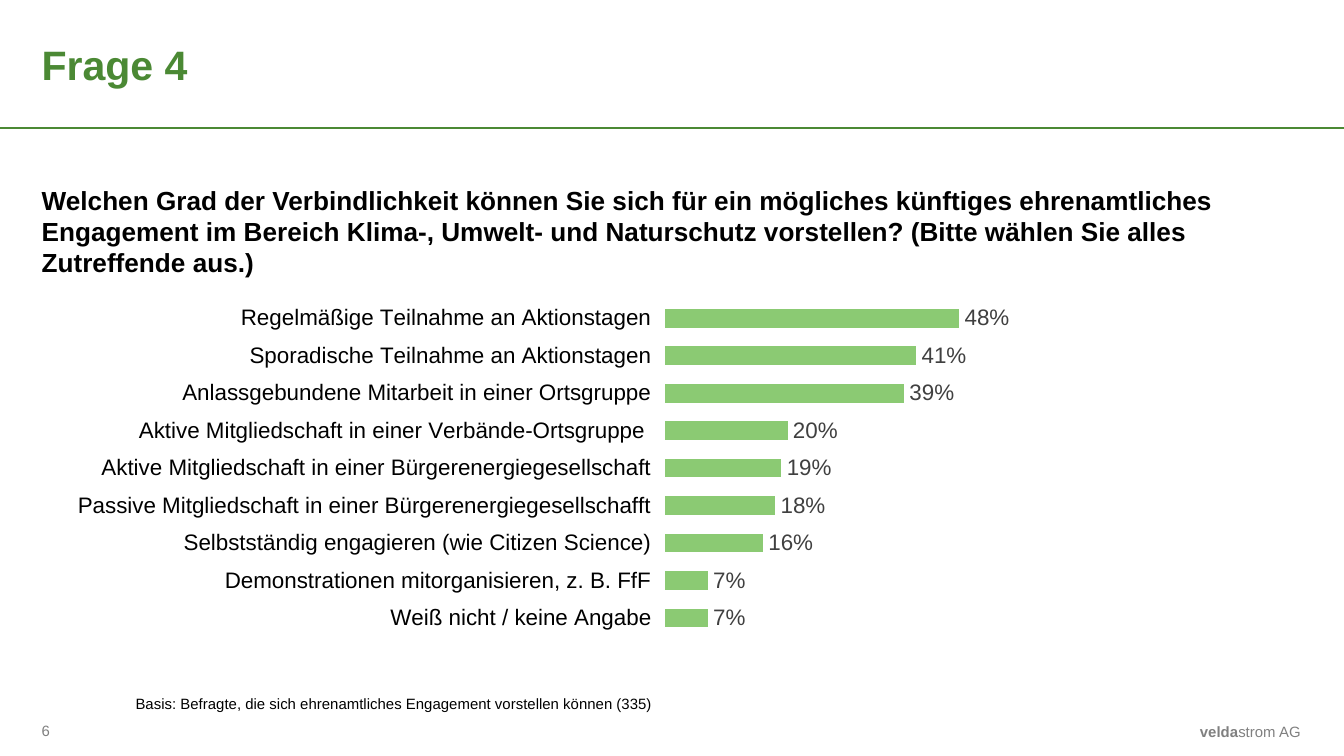
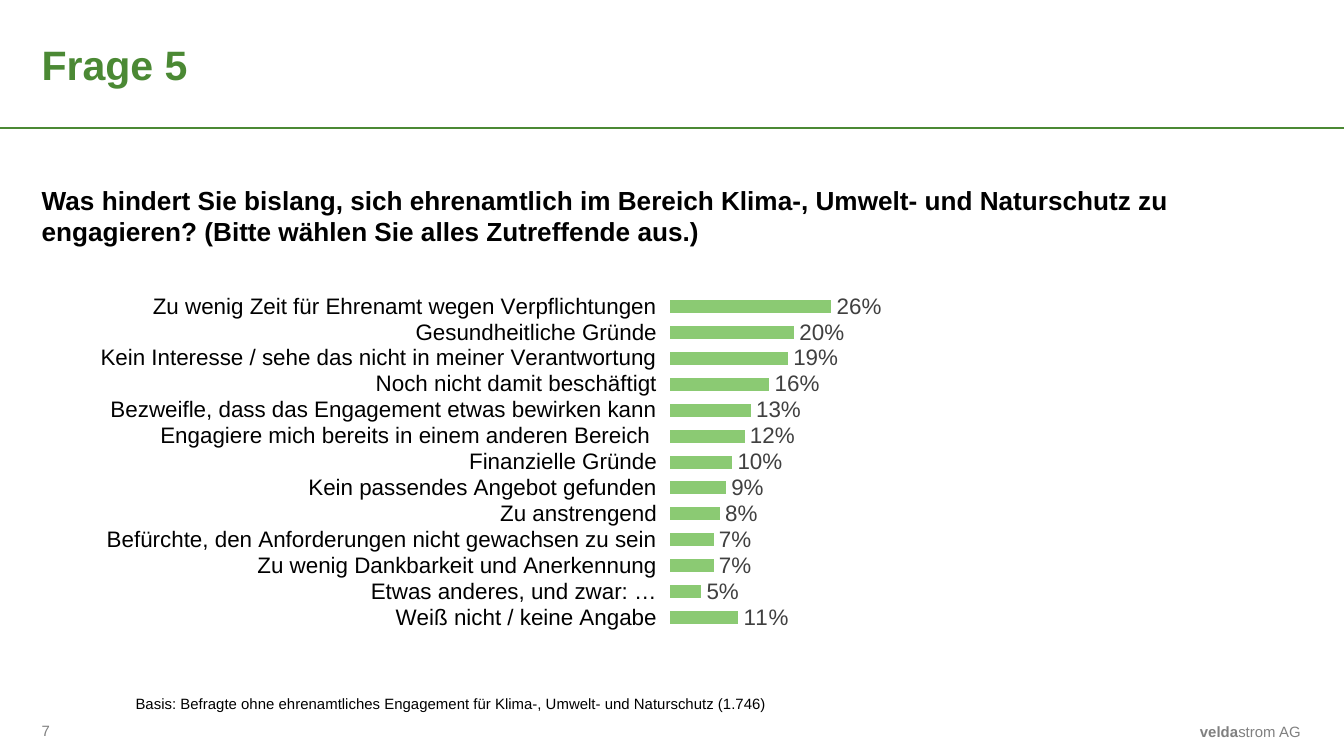
import lxml.etree
import pptx
import pptx.chart.data
import pptx.dml.color
import pptx.enum.chart
import pptx.enum.shapes
import pptx.enum.text
import pptx.oxml
import pptx.oxml.ns
import pptx.util

Inches = pptx.util.Inches
Pt = pptx.util.Pt
qn = pptx.oxml.ns.qn

FONT = "Arial"
GREEN = "4B8934"
BAR_GREEN = "8BCA73"
GREY = "808080"
LABEL_GREY = "404040"
BLACK = "000000"
LEFT = 0.31
CONTENT_WIDTH = 9.37

COMMITMENT = [
    ("Regelmäßige Teilnahme an Aktionstagen", 0.48),
    ("Sporadische Teilnahme an Aktionstagen", 0.41),
    ("Anlassgebundene Mitarbeit in einer Ortsgruppe", 0.39),
    ("Aktive Mitgliedschaft in einer Verbände-Ortsgruppe ", 0.20),
    ("Aktive Mitgliedschaft in einer Bürgerenergiegesellschaft", 0.19),
    ("Passive Mitgliedschaft in einer Bürgerenergiegesellschafft", 0.18),
    ("Selbstständig engagieren (wie Citizen Science)", 0.16),
    ("Demonstrationen mitorganisieren, z. B. FfF", 0.07),
    ("Weiß nicht / keine Angabe", 0.07),
]
OBSTACLES = [
    ("Zu wenig Zeit für Ehrenamt wegen Verpflichtungen", 0.26),
    ("Gesundheitliche Gründe", 0.20),
    ("Kein Interesse / sehe das nicht in meiner Verantwortung", 0.19),
    ("Noch nicht damit beschäftigt", 0.16),
    ("Bezweifle, dass das Engagement etwas bewirken kann", 0.13),
    ("Engagiere mich bereits in einem anderen Bereich ", 0.12),
    ("Finanzielle Gründe", 0.10),
    ("Kein passendes Angebot gefunden", 0.09),
    ("Zu anstrengend", 0.08),
    ("Befürchte, den Anforderungen nicht gewachsen zu sein", 0.07),
    ("Zu wenig Dankbarkeit und Anerkennung", 0.07),
    ("Etwas anderes, und zwar: …", 0.05),
    ("Weiß nicht / keine Angabe", 0.11),
]


def color(hex_string):
    """Return the colour for a hex string."""
    return pptx.dml.color.RGBColor.from_string(hex_string)


def style_font(font, size, hex_string, bold=False):
    """Set typeface, size, colour and weight of a font."""
    font.name = FONT
    font.size = Pt(size)
    font.bold = bold
    font.color.rgb = color(hex_string)


def place(shape, left, top, width, height):
    """Move a shape to a box given in inches."""
    shape.left, shape.top = Inches(left), Inches(top)
    shape.width, shape.height = Inches(width), Inches(height)


def style_frame(shape, insets=(0, 0, 0, 0), middle=True, wrap=True):
    """Set insets, anchor and wrapping of a shape's text and return its frame."""
    frame = shape.text_frame
    frame.margin_left, frame.margin_top, frame.margin_right, frame.margin_bottom = map(Inches, insets)
    anchors = pptx.enum.text.MSO_ANCHOR
    frame.vertical_anchor = anchors.MIDDLE if middle else anchors.TOP
    frame.auto_size = pptx.enum.text.MSO_AUTO_SIZE.NONE
    frame.word_wrap = wrap
    return frame


def write_line(frame, text, size, hex_string, bold=False):
    """Write one left-aligned paragraph and return it."""
    frame.text = text
    paragraph = frame.paragraphs[0]
    paragraph.alignment = pptx.enum.text.PP_ALIGN.LEFT
    style_font(paragraph.runs[0].font, size, hex_string, bold)
    return paragraph


def add_label(slide, box, text, size, hex_string, **frame_options):
    """Add a text box with one line of text and return its paragraph."""
    shape = slide.shapes.add_textbox(*map(Inches, box))
    return write_line(style_frame(shape, **frame_options), text, size, hex_string)


def add_header(slide, title):
    """Fill the title and draw the rule below it."""
    rule = slide.shapes.add_connector(
        pptx.enum.shapes.MSO_CONNECTOR.STRAIGHT, 0, Inches(0.95), Inches(10), Inches(0.95))
    rule.line.color.rgb = color(GREEN)
    rule.line.width = Pt(1)
    lxml.etree.SubElement(rule.element.spPr, qn("a:effectLst"))
    place(slide.shapes.title, LEFT, 0.3, CONTENT_WIDTH, 0.35)
    write_line(style_frame(slide.shapes.title), title, 22, GREEN, True)


def add_footer(slide, number):
    """Add the page number and the company name."""
    add_label(slide, (LEFT, 5.35, 0.28, 0.17), str(number), 8, GREY)
    company = add_label(slide, (8.83, 5.32, 0.86, 0.24), "velda", 8, GREY,
                        insets=(0.1, 0.05, 0, 0.05), wrap=False)
    company.runs[0].font.bold = True
    legal_form = company.add_run()
    legal_form.text = "strom AG"
    style_font(legal_form.font, 8, GREY)


def add_question(slide, question, height):
    """Fill the body placeholder with the survey question."""
    body = slide.placeholders[1]
    place(body, LEFT, 1.26, CONTENT_WIDTH, height)
    frame = style_frame(body, insets=(0, 0.11, 0, 0), middle=False)
    paragraph = write_line(frame, question, 14, BLACK, True)
    paragraph.space_before = Pt(0)
    paragraph.space_after = Pt(6)
    properties = paragraph._p.get_or_add_pPr()
    properties.set("marL", "0")
    properties.set("indent", "0")
    lxml.etree.SubElement(properties, qn("a:buNone"))


def set_plot_area(chart, area):
    """Fix the inner plot area as fractions of the chart."""
    plot_area = chart._chartSpace.find(".//" + qn("c:plotArea"))
    for layout in plot_area.findall(qn("c:layout")):
        plot_area.remove(layout)
    layout = lxml.etree.Element(qn("c:layout"))
    manual = lxml.etree.SubElement(layout, qn("c:manualLayout"))
    settings = [("layoutTarget", "inner"), ("xMode", "edge"), ("yMode", "edge")]
    settings += zip("xywh", area)
    for name, value in settings:
        lxml.etree.SubElement(manual, qn("c:" + name)).set("val", str(value))
    plot_area.insert(0, layout)


def add_answers(slide, answers, box, area):
    """Add the bar chart of answer shares."""
    data = pptx.chart.data.CategoryChartData(number_format="0%")
    data.categories = [answer for answer, share in answers]
    data.add_series("Series 1", [share for answer, share in answers])
    chart = slide.shapes.add_chart(
        pptx.enum.chart.XL_CHART_TYPE.BAR_CLUSTERED, *map(Inches, box), data).chart
    chart.has_title = False
    chart.has_legend = False
    style_font(chart.font, 12, BLACK)
    set_plot_area(chart, area)

    answer_axis = chart.category_axis
    answer_axis.reverse_order = True
    answer_axis.has_major_gridlines = False
    answer_axis.major_tick_mark = pptx.enum.chart.XL_TICK_MARK.NONE
    answer_axis.tick_label_position = pptx.enum.chart.XL_TICK_LABEL_POSITION.LOW
    answer_axis.format.line.fill.background()
    style_font(answer_axis.tick_labels.font, 12, BLACK)

    share_axis = chart.value_axis
    share_axis.minimum_scale, share_axis.maximum_scale = 0, 1
    share_axis.major_unit = 0.1
    share_axis.has_major_gridlines = False
    share_axis.visible = False

    plot = chart.plots[0]
    plot.gap_width = 100
    plot.overlap = -10
    plot.vary_by_categories = False
    fill = plot.series[0].format.fill
    fill.solid()
    fill.fore_color.rgb = color(BAR_GREEN)
    labels = plot.series[0].data_labels
    labels.show_value = True
    labels.number_format = "0%"
    labels.number_format_is_linked = False
    labels.position = pptx.enum.chart.XL_LABEL_POSITION.OUTSIDE_END
    style_font(labels.font, 12, LABEL_GREY)


def add_survey_slide(presentation, number, title, question, question_height, basis, answers, box, area):
    """Add one slide with a question, its answers and their basis."""
    slide = presentation.slides.add_slide(presentation.slide_layouts[1])
    add_header(slide, title)
    add_question(slide, question, question_height)
    add_answers(slide, answers, box, area)
    add_label(slide, (0.91, 5.1, 9.09, 0.33), basis, 8, BLACK,
              insets=(0.1, 0.07, 0.1, 0.1), middle=False)
    add_footer(slide, number)


def main():
    """Build and save the survey slides."""
    presentation = pptx.Presentation()
    presentation.slide_width = Inches(10)
    presentation.slide_height = Inches(10) * 9 // 16
    add_survey_slide(
        presentation, 6, "Frage 4",
        "Welchen Grad der Verbindlichkeit können Sie sich für ein mögliches künftiges ehrenamtliches "
        "Engagement im Bereich Klima-, Umwelt- und Naturschutz vorstellen? "
        "(Bitte wählen Sie alles Zutreffende aus.)", 0.82,
        "Basis: Befragte, die sich ehrenamtliches Engagement vorstellen können (335)",
        COMMITMENT, (LEFT, 2.06, CONTENT_WIDTH, 2.82), (0.495, 0.06, 0.487, 0.89))
    add_survey_slide(
        presentation, 7, "Frage 5",
        "Was hindert Sie bislang, sich ehrenamtlich im Bereich Klima-, Umwelt- und Naturschutz "
        "zu engagieren? (Bitte wählen Sie alles Zutreffende aus.)", 0.7,
        "Basis: Befragte ohne ehrenamtliches Engagement für Klima-, Umwelt- und Naturschutz (1.746)",
        OBSTACLES, (0.59, 2.17, 9.22, 2.82), (0.477, 0.005, 0.5, 0.89))
    presentation.save("out.pptx")


if __name__ == "__main__":
    main()
